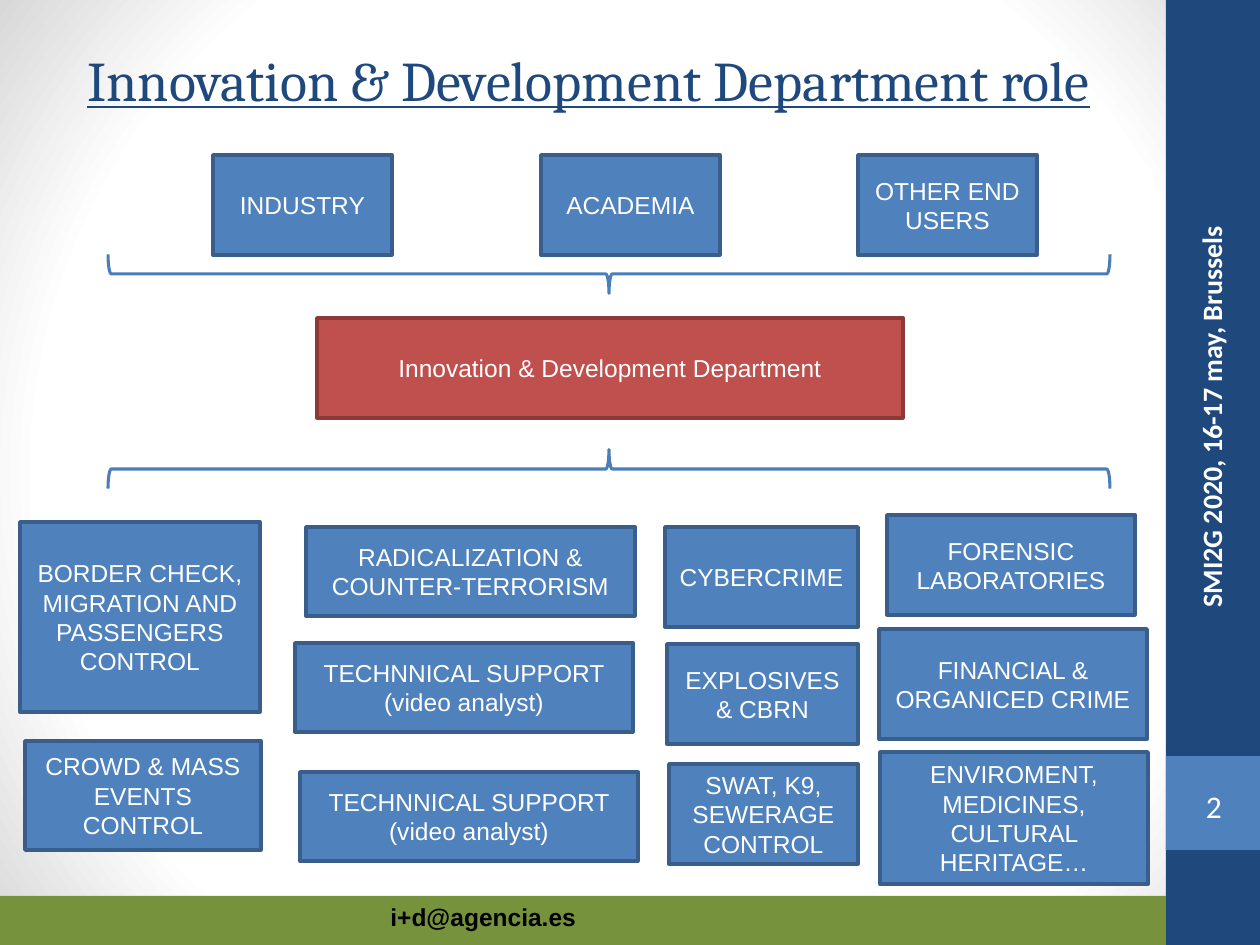
import lxml.etree
import pptx
import pptx.dml.color
import pptx.enum.shapes
import pptx.enum.text
import pptx.oxml
import pptx.oxml.ns
import pptx.util

RGB = pptx.dml.color.RGBColor
SHAPE = pptx.enum.shapes.MSO_SHAPE
ALIGN = pptx.enum.text.PP_ALIGN
ANCHOR = pptx.enum.text.MSO_ANCHOR

NAVY = RGB(0x1F, 0x49, 0x7D)
BLUE = RGB(0x4F, 0x81, 0xBD)
BLUE_EDGE = RGB(0x39, 0x5E, 0x89)
BRACE_BLUE = RGB(0x4A, 0x7D, 0xBA)
RED = RGB(0xC0, 0x50, 0x4D)
RED_EDGE = RGB(0x8C, 0x3A, 0x38)
GREEN = RGB(0x76, 0x92, 0x3C)
WHITE = RGB(0xFF, 0xFF, 0xFF)
BLACK = RGB(0, 0, 0)

EMU_PER_PX = 914400 / 126
SLIDE_WIDTH, SLIDE_HEIGHT = 1260, 945
SIDEBAR_LEFT = 1166

TITLE = "Innovation & Development Department role"
EVENT = "SMI2G 2020, 16-17 may, Brussels"
CONTACT = "i+d@agencia.es"
DEPARTMENT = ("Innovation & Development Department", (317, 318, 586, 100))

PARTNER_TOP, PARTNER_WIDTH, PARTNER_HEIGHT = 155, 179, 100
PARTNERS = [("INDUSTRY", 213), ("ACADEMIA", 541), ("OTHER END USERS", 858)]

# Each unit: text, (left, top, width, height)
UNITS = [
    ("BORDER CHECK, MIGRATION AND PASSENGERS CONTROL", (20, 522, 240, 190)),
    ("CROWD & MASS EVENTS CONTROL", (25, 741, 236, 109)),
    ("RADICALIZATION & COUNTER-TERRORISM", (306, 527, 329, 89)),
    ("TECHNNICAL SUPPORT (video analyst)", (295, 643, 338, 89)),
    ("TECHNNICAL SUPPORT (video analyst)", (300, 772, 338, 89)),
    ("CYBERCRIME", (665, 527, 193, 100)),
    ("EXPLOSIVES & CBRN", (667, 644, 191, 100)),
    ("SWAT, K9, SEWERAGE CONTROL", (669, 764, 189, 100)),
    ("FORENSIC LABORATORIES", (887, 515, 248, 100)),
    ("FINANCIAL & ORGANICED CRIME", (879, 629, 268, 110)),
    ("ENVIROMENT, MEDICINES, CULTURAL HERITAGE…", (880, 752, 268, 132)),
]

BRACE_CENTER_X, BRACE_DEPTH, BRACE_SPAN = 609, 39, 1002
BRACES = [(274, 90), (469, 270)]  # centre y, rotation

GRADIENT = """
<a:gradFill %s rotWithShape="1">
  <a:gsLst>
    <a:gs pos="0"><a:srgbClr val="FFFFFF"/></a:gs>
    <a:gs pos="75000"><a:srgbClr val="FFFFFF"/></a:gs>
    <a:gs pos="100000"><a:srgbClr val="D8D8D8"/></a:gs>
  </a:gsLst>
  <a:path path="circle"><a:fillToRect l="50000" t="50000" r="50000" b="50000"/></a:path>
</a:gradFill>""" % pptx.oxml.ns.nsdecls("a")


def px(length):
    return pptx.util.Emu(round(length * EMU_PER_PX))


def set_background(slide):
    """Give the slide a radial gradient, white in the middle and grey in the corners."""
    slide.background.fill.solid()
    solid = slide.background._cSld.find(".//" + pptx.oxml.ns.qn("a:solidFill"))
    solid.getparent().replace(solid, pptx.oxml.parse_xml(GRADIENT))


def add_box(slide, kind, place, fill=None, edge=None, edge_width=2):
    box = slide.shapes.add_shape(kind, *map(px, place))
    box.shadow.inherit = False
    if fill is None:
        box.fill.background()
    else:
        box.fill.solid()
        box.fill.fore_color.rgb = fill
    if edge is None:
        box.line.fill.background()
    else:
        box.line.color.rgb = edge
        box.line.width = pptx.util.Pt(edge_width)
    return box


def write(box, text, size=14, font="Arial", color=WHITE, bold=False,
          underline=False, align=ALIGN.CENTER, anchor=ANCHOR.MIDDLE):
    frame = box.text_frame
    frame.word_wrap = True
    frame.vertical_anchor = anchor
    para = frame.paragraphs[0]
    para.alignment = align
    span = para.add_run()
    span.text = text
    span.font.size = pptx.util.Pt(size)
    span.font.name = font
    span.font.color.rgb = color
    span.font.bold = bold
    span.font.underline = underline
    return para


def add_label(slide, place, text, **style):
    label = slide.shapes.add_textbox(*map(px, place))
    write(label, text, **style)
    return label


def add_frame(slide):
    """Add the sidebar, title, page number, event name and footer."""
    sidebar_width = SLIDE_WIDTH - SIDEBAR_LEFT
    add_box(slide, SHAPE.RECTANGLE, (SIDEBAR_LEFT, 0, sidebar_width, SLIDE_HEIGHT), NAVY)
    add_box(slide, SHAPE.RECTANGLE, (SIDEBAR_LEFT, 756, sidebar_width, 94), BLUE)
    add_label(slide, (64, 0, 1050, 158), TITLE,
              size=32, font="Cambria", color=NAVY, underline=True)
    number = add_label(slide, (1176, 779, 76, 54), "2", size=18, font="Calibri")
    frame = number.text_frame
    frame.margin_left = frame.margin_right = frame.margin_top = frame.margin_bottom = 0
    event = add_label(slide, (940, 460, 542, 50), EVENT,
                      size=16, font="Calibri", bold=True, align=ALIGN.RIGHT)
    event.rotation = 270
    footer = add_box(slide, SHAPE.RECTANGLE, (0, 896, SIDEBAR_LEFT, 50), GREEN)
    para = write(footer, CONTACT, color=BLACK, bold=True,
                 align=ALIGN.LEFT, anchor=ANCHOR.TOP)
    para._p.get_or_add_pPr().set("marL", str(px(378)))


def add_chart_of_roles(slide):
    partners = [(text, (left, PARTNER_TOP, PARTNER_WIDTH, PARTNER_HEIGHT))
                for text, left in PARTNERS]
    for text, place in partners + UNITS:
        write(add_box(slide, SHAPE.RECTANGLE, place, BLUE, BLUE_EDGE), text)

    text, place = DEPARTMENT
    write(add_box(slide, SHAPE.RECTANGLE, place, RED, RED_EDGE), text)

    for center_y, rotation in BRACES:
        place = (BRACE_CENTER_X - BRACE_DEPTH / 2, center_y - BRACE_SPAN / 2,
                 BRACE_DEPTH, BRACE_SPAN)
        brace = add_box(slide, SHAPE.RIGHT_BRACE, place, edge=BRACE_BLUE, edge_width=1.75)
        brace.rotation = rotation


def main():
    deck = pptx.Presentation()
    deck.slide_width, deck.slide_height = px(SLIDE_WIDTH), px(SLIDE_HEIGHT)
    slide = deck.slides.add_slide(deck.slide_layouts[6])
    set_background(slide)
    add_frame(slide)
    add_chart_of_roles(slide)
    deck.save("out.pptx")


if __name__ == "__main__":
    main()
